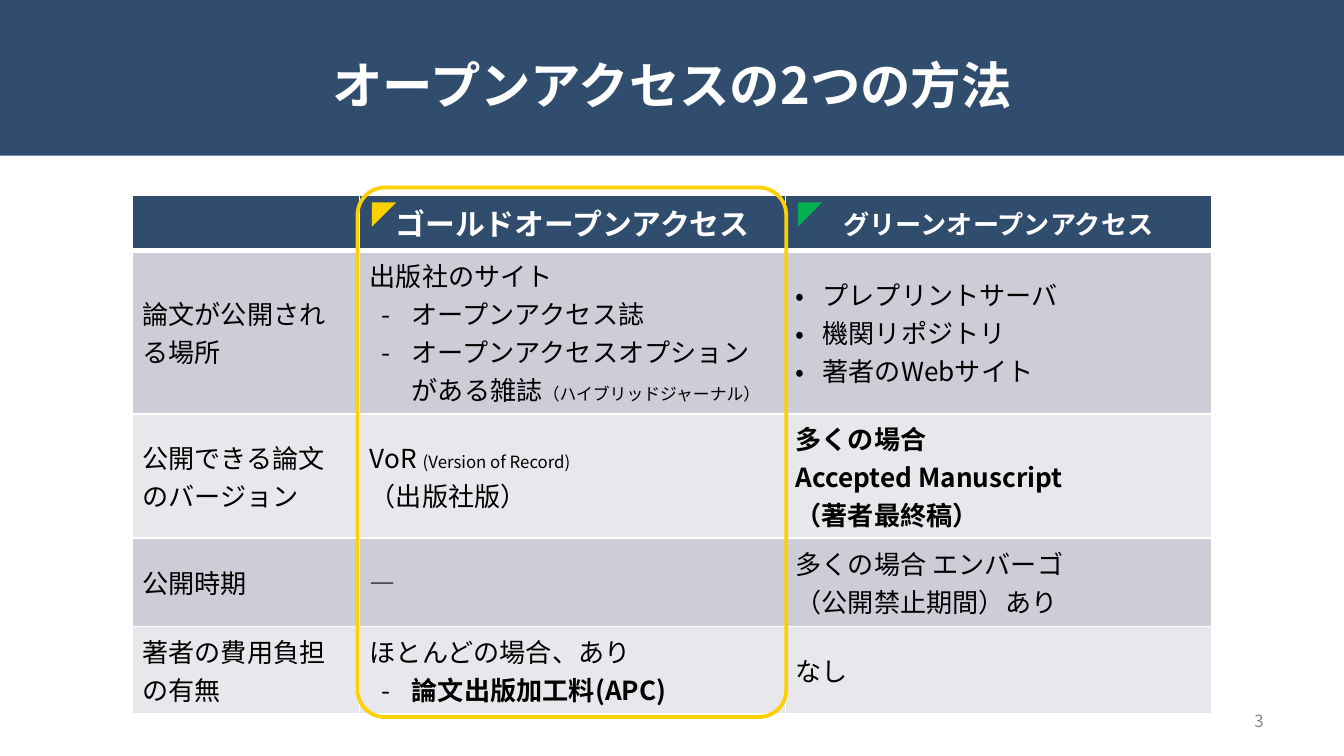
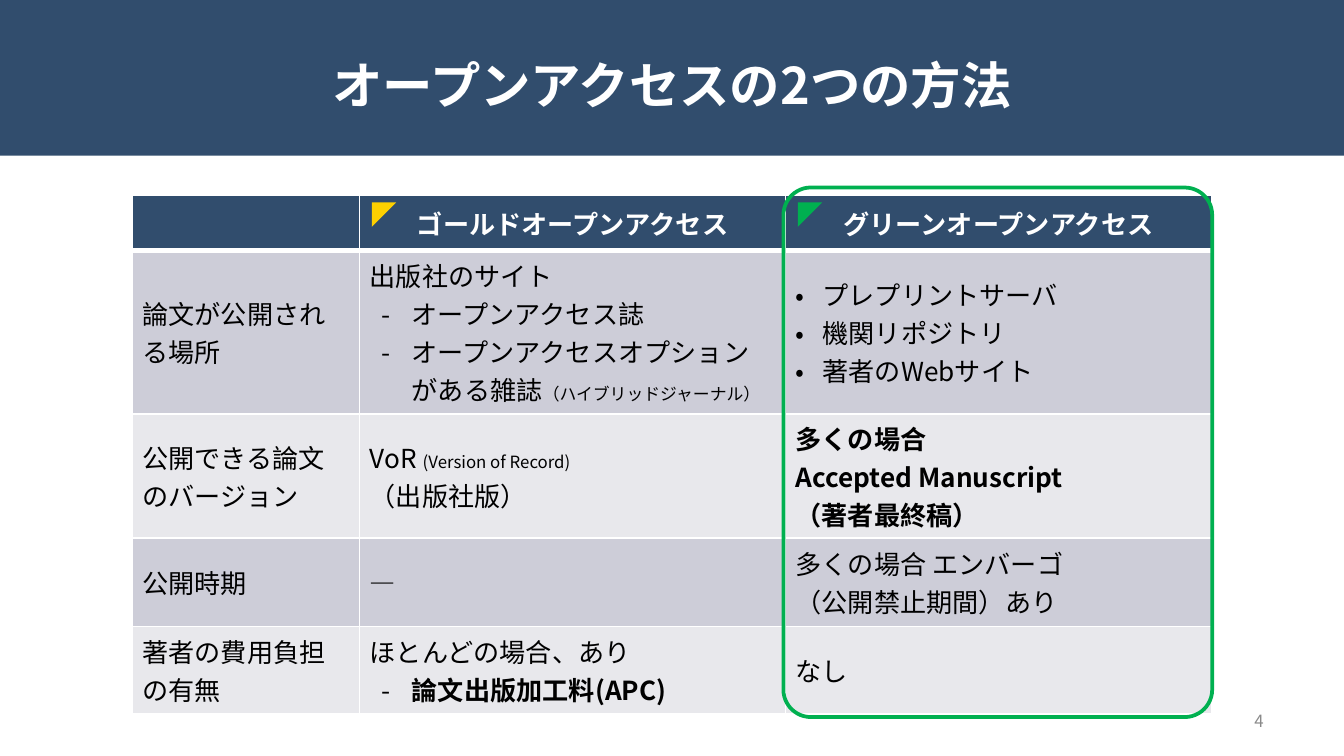
from collections import namedtuple
from dataclasses import dataclass
from itertools import accumulate

from lxml.etree import SubElement
from pptx import Presentation
from pptx.dml.color import RGBColor
from pptx.enum.shapes import MSO_SHAPE as Preset
from pptx.enum.text import MSO_ANCHOR as Anchor, PP_ALIGN as Align
from pptx.oxml import parse_xml
from pptx.oxml.ns import nsdecls, qn
from pptx.util import Pt

COLORS = {
    "navy": "314D6D", "white": "FFFFFF", "black": "000000", "gray": "898989",
    "dark_row": "CDCDD8", "light_row": "E8E8EC", "gold": "FDD000", "green": "00B050",
}
FONT = "Noto Sans CJK JP"
BODY_SIZE, SMALL_SIZE, FOCUS_SIZE = 14, 9, 16
INDENTS = {"-": (22.5, -16), "•": (14.4, -14.4)}

Box = namedtuple("Box", "left top width height")
SLIDE = Box(0, 0, 720, 405)
BAND = Box(0, 0, 720, 83.4)
TITLE = Box(36, 7.2, 648, 76.3)
PAGE_NUMBER = Box(516.2, 375.1, 167.8, 21.6)
COLUMN_WIDTHS = [121.8, 228.2, 228.2]
ROW_HEIGHTS = [29.5, 87.5, 66.6, 47.4, 46.8]
TABLE = Box(70.9, 104.7, sum(COLUMN_WIDTHS), sum(ROW_HEIGHTS))


@dataclass
class Line:
    text: str
    bullet: str = ""
    bold: bool = False
    aside: str = ""


TITLE_TEXT = "オープンアクセスの2つの方法"
METHODS = [("ゴールドオープンアクセス", "gold"), ("グリーンオープンアクセス", "green")]
COMPARISON = [
    (
        [Line("論文が公開される場所")],
        [
            Line("出版社のサイト"),
            Line("オープンアクセス誌", "-"),
            Line("オープンアクセスオプションがある雑誌", "-", aside="（ハイブリッドジャーナル）"),
        ],
        [Line(place, "•") for place in ("プレプリントサーバ", "機関リポジトリ", "著者のWebサイト")],
    ),
    (
        [Line("公開できる論文のバージョン")],
        [Line("VoR ", aside="(Version of Record)"), Line("（出版社版）")],
        [Line(part, bold=True) for part in ("多くの場合", "Accepted Manuscript", "（著者最終稿）")],
    ),
    (
        [Line("公開時期")],
        [Line("―")],
        [Line("多くの場合 エンバーゴ"), Line("（公開禁止期間）あり")],
    ),
    (
        [Line("著者の費用負担の有無")],
        [Line("ほとんどの場合、あり"), Line("論文出版加工料(APC)", "-", bold=True)],
        [Line("なし")],
    ),
]


def rgb(color):
    return RGBColor.from_string(COLORS[color])


def points(box):
    return [Pt(length) for length in box]


def style_run(run, size, color, bold=False):
    font = run.font
    font.size, font.bold, font.name = Pt(size), bold, FONT
    font.color.rgb = rgb(color)
    east_asian = SubElement(run._r.get_or_add_rPr(), qn("a:ea"))
    east_asian.set("typeface", FONT)


def set_end_size(paragraph, size):
    paragraph._p.get_or_add_endParaRPr().set("sz", str(size * 100))


def add_label(slide, box, text, size, color, align, bold=False):
    frame = slide.shapes.add_textbox(*points(box)).text_frame
    frame.word_wrap = True
    frame.vertical_anchor = Anchor.MIDDLE
    frame.text = text
    paragraph = frame.paragraphs[0]
    paragraph.alignment = align
    style_run(paragraph.runs[0], size, color, bold)


def add_preset(slide, preset, box, fill=None, outline=None):
    shape = slide.shapes.add_shape(preset, *points(box))
    shape.shadow.inherit = False
    if fill:
        shape.fill.solid()
        shape.fill.fore_color.rgb = rgb(fill)
    else:
        shape.fill.background()
    if outline:
        shape.line.color.rgb = rgb(outline)
        shape.line.width = Pt(2)
    else:
        shape.line.fill.background()
    return shape


def add_frame(slide, number):
    add_preset(slide, Preset.RECTANGLE, BAND, fill="navy")
    add_label(slide, TITLE, TITLE_TEXT, 27, "white", Align.CENTER, bold=True)
    add_label(slide, PAGE_NUMBER, str(number), SMALL_SIZE, "gray", Align.RIGHT)


def add_bullet(paragraph, bullet):
    left, hanging = INDENTS[bullet]
    properties = paragraph._p.get_or_add_pPr()
    properties.set("marL", str(Pt(left)))
    properties.set("indent", str(Pt(hanging)))
    SubElement(properties, qn("a:buFont")).set("typeface", FONT)
    SubElement(properties, qn("a:buChar")).set("char", bullet)


def style_cell(cell, fill, top=1, bottom=1):
    cell.vertical_anchor = Anchor.MIDDLE
    cell.margin_left = cell.margin_right = Pt(5.4)
    cell.margin_top = cell.margin_bottom = Pt(2.7)
    properties = cell._tc.get_or_add_tcPr()
    for side, width in zip("LRTB", (1, 1, top, bottom)):
        properties.append(parse_xml(
            f'<a:ln{side} {nsdecls("a")} w="{Pt(width)}"><a:solidFill>'
            f'<a:srgbClr val="{COLORS["white"]}"/></a:solidFill></a:ln{side}>'
        ))
    cell.fill.solid()
    cell.fill.fore_color.rgb = rgb(fill)


def fill_header(cells, focus):
    for cell in cells:
        style_cell(cell, "navy", bottom=3)
    set_end_size(cells[0].text_frame.paragraphs[0], BODY_SIZE)
    for cell, (name, color) in zip(cells[1:], METHODS):
        cell.text_frame.text = name
        paragraph = cell.text_frame.paragraphs[0]
        paragraph.alignment = Align.CENTER
        size = FOCUS_SIZE if color == focus == "gold" else BODY_SIZE
        style_run(paragraph.runs[0], size, "white", bold=True)


def fill_body_cell(cell, lines):
    frame = cell.text_frame
    frame.text = "\n".join(line.text for line in lines)
    for paragraph, line in zip(frame.paragraphs, lines):
        if line.bullet:
            add_bullet(paragraph, line.bullet)
        style_run(paragraph.runs[0], BODY_SIZE, "black", line.bold)
        if line.aside:
            aside = paragraph.add_run()
            aside.text = line.aside
            style_run(aside, SMALL_SIZE, "black")
        set_end_size(paragraph, BODY_SIZE)


def add_comparison(slide, box, focus):
    table = slide.shapes.add_table(len(ROW_HEIGHTS), len(COLUMN_WIDTHS), *points(box)).table
    table.horz_banding = False
    for column, width in zip(table.columns, COLUMN_WIDTHS):
        column.width = Pt(width)
    for row, height in zip(table.rows, ROW_HEIGHTS):
        row.height = Pt(height)
    header, *body = [list(row.cells) for row in table.rows]
    fill_header(header, focus)
    for index, (cells, contents) in enumerate(zip(body, COMPARISON)):
        for cell, lines in zip(cells, contents):
            style_cell(cell, "light_row" if index % 2 else "dark_row", top=1 if index else 3)
            fill_body_cell(cell, lines)


def add_method_marks(slide, box, focus):
    method_lefts = [box.left + offset for offset in accumulate(COLUMN_WIDTHS[:-1])]
    for left, (_, color) in zip(method_lefts, METHODS):
        corner = add_preset(slide, Preset.RIGHT_TRIANGLE,
                            Box(left + 6.5, box.top + 3.8, 13, 13), fill=color)
        corner._element.spPr.get_or_add_xfrm().set("flipV", "1")
    for left, (_, color) in zip(method_lefts, METHODS):
        if color == focus:
            highlight = add_preset(slide, Preset.ROUNDED_RECTANGLE,
                                   Box(left - 1.2, box.top - 4.2, 229.7, 283.7), outline=color)
            highlight.adjustments[0] = 0.064


def add_methods_slide(deck, number, focus):
    slide = deck.slides.add_slide(deck.slide_layouts[6])
    add_frame(slide, number)
    add_comparison(slide, TABLE, focus)
    add_method_marks(slide, TABLE, focus)


def main():
    deck = Presentation()
    deck.slide_width, deck.slide_height = Pt(SLIDE.width), Pt(SLIDE.height)
    for number, (_, color) in enumerate(METHODS, start=3):
        add_methods_slide(deck, number, color)
    deck.save("out.pptx")


if __name__ == "__main__":
    main()
